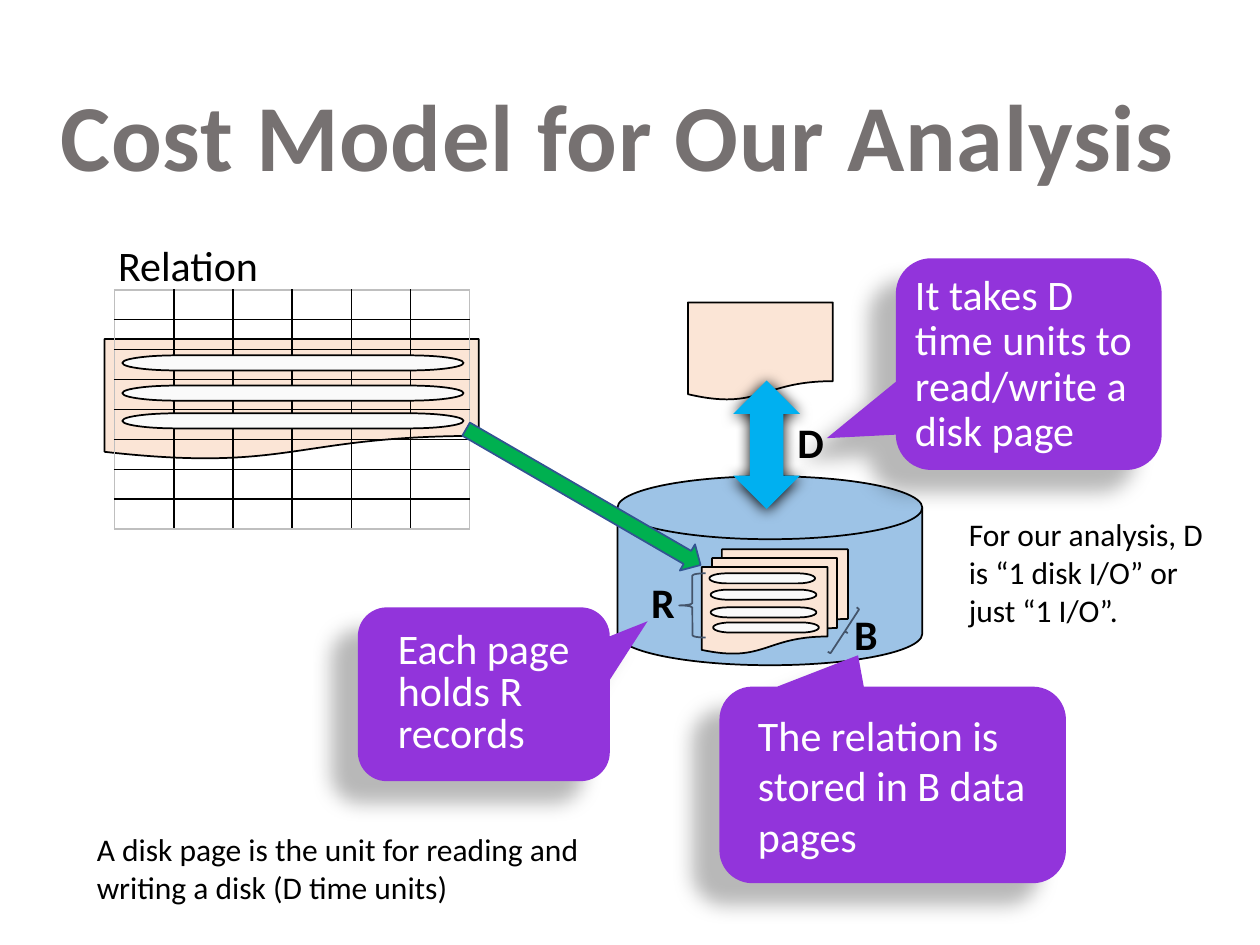
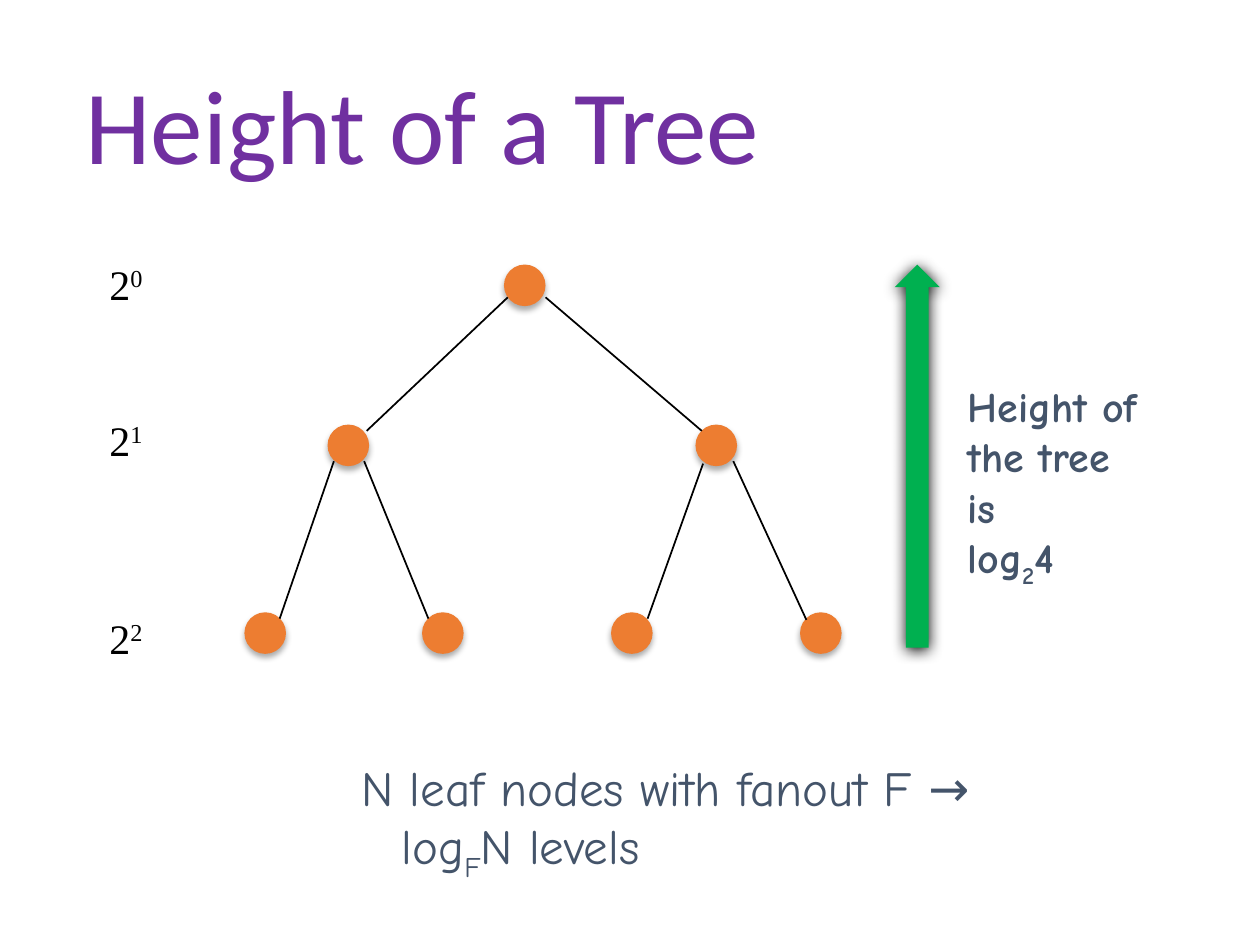
import pptx
import pptx.dml.color
import pptx.enum.shapes
import pptx.enum.text
import pptx.oxml
import pptx.oxml.ns
import pptx.util
from lxml import etree

Inches = pptx.util.Inches
Pt = pptx.util.Pt
SHAPE = pptx.enum.shapes.MSO_SHAPE
ALIGN = pptx.enum.text.PP_ALIGN
ANCHOR = pptx.enum.text.MSO_ANCHOR
qn = pptx.oxml.ns.qn

COLORS = {
    "black": "000000", "white": "FFFFFF", "grid_edge": "BFBFBF",
    "page": "FBE5D6", "record": "FAFAFA", "disk": "9DC3E6",
    "callout": "9234DB", "transfer": "00B0F0", "green": "00B050",
    "arrow_edge": "325491", "slate": "44546A", "gray_title": "767171",
    "purple_title": "7030A0", "node": "ED7D31",
}
CALLOUT_SHADOW = (28, 11.8, 19.7, 141)
ARROW_SHADOW = (100, 8.5, 1, 90)
NODE_SHADOW = (32, 3.5, 2.2, 90)


class Deck:
    def __init__(self):
        self.show = pptx.Presentation()
        self.show.slide_width, self.show.slide_height = Inches(10), Inches(7.5)
        self.slide = None

    def new_slide(self):
        self.slide = self.show.slides.add_slide(self.show.slide_layouts[6])

    def color(self, name):
        return pptx.dml.color.RGBColor.from_string(COLORS[name])

    def shape(self, kind, at, fill=None, line=None, rotation=0, shadow=None):
        shape = self.slide.shapes.add_shape(kind, *map(Inches, at))
        shape.rotation = rotation
        if fill:
            shape.fill.solid()
            shape.fill.fore_color.rgb = self.color(fill)
        else:
            shape.fill.background()
        if line:
            shape.line.color.rgb = self.color(line)
            shape.line.width = Pt(1)
        else:
            shape.line.fill.background()
        shape.shadow.inherit = False
        if shadow:
            self.cast_shadow(shape, *shadow)
        return shape

    def cast_shadow(self, shape, opacity, blur, distance, angle):
        effects = shape._element.spPr.find(qn("a:effectLst"))
        outer = etree.SubElement(
            effects, qn("a:outerShdw"), blurRad=str(int(Pt(blur))),
            dist=str(int(Pt(distance))), dir=str(angle * 60000),
            algn="ctr", rotWithShape="0")
        tint = etree.SubElement(outer, qn("a:srgbClr"), val=COLORS["black"])
        etree.SubElement(tint, qn("a:alpha"), val=str(opacity * 1000))

    def line(self, start, end):
        line = self.slide.shapes.add_connector(
            pptx.enum.shapes.MSO_CONNECTOR.STRAIGHT,
            *map(Inches, (*start, *end)))
        line.line.color.rgb = self.color("black")
        line.line.width = Pt(1)
        etree.SubElement(line._element.spPr, qn("a:effectLst"))

    def style(self, run, size, color, font="Calibri", bold=False):
        run.font.size = Pt(size)
        run.font.name = font
        run.font.bold = bold
        run.font.color.rgb = self.color(color)

    def text(self, at, paragraphs, size, color="black", font="Calibri",
             bold=False, wrap=True):
        box = self.slide.shapes.add_textbox(*map(Inches, at))
        frame = box.text_frame
        frame.word_wrap = wrap
        frame.auto_size = pptx.enum.text.MSO_AUTO_SIZE.NONE
        if isinstance(paragraphs, str):
            paragraphs = [[(paragraphs, 0)]]
        for index, pieces in enumerate(paragraphs):
            paragraph = frame.add_paragraph() if index else frame.paragraphs[0]
            for words, baseline in pieces:
                run = paragraph.add_run()
                run.text = words
                self.style(run, size, color, font, bold)
                if baseline:
                    run.font._element.set("baseline", str(baseline * 1000))
        return frame

    def callout(self, at, words, pointer, insets, spacing=None):
        bubble = self.shape(SHAPE.ROUNDED_RECTANGULAR_CALLOUT, at, "callout",
                            shadow=CALLOUT_SHADOW)
        for index, value in enumerate((*pointer, 0.167)):
            bubble.adjustments[index] = value
        frame = bubble.text_frame
        frame.word_wrap = True
        frame.vertical_anchor = ANCHOR.MIDDLE
        frame.margin_left, frame.margin_right = map(Inches, insets)
        frame.text = words
        paragraph = frame.paragraphs[0]
        paragraph.alignment = ALIGN.LEFT
        if spacing:
            paragraph.line_spacing = Pt(spacing)
        self.style(paragraph.runs[0], 24, "white")

    def grid(self, at, rows, columns):
        table = self.slide.shapes.add_table(
            rows, columns, *map(Inches, at)).table
        table.first_row = table.horz_banding = False
        for column in table.columns:
            column.width = Inches(at[2] / columns)
        for r, row in enumerate(table.rows):
            row.height = Inches(at[3] / rows)
            for c, cell in enumerate(row.cells):
                cell.margin_top = cell.margin_bottom = 0
                end = etree.SubElement(cell.text_frame.paragraphs[0]._p,
                                       qn("a:endParaRPr"))
                end.set("sz", "800")
                edges = {"lnL": c == 0, "lnR": c == columns - 1,
                         "lnT": r == 0, "lnB": r == rows - 1}
                properties = cell._tc.get_or_add_tcPr()
                for side, outer in edges.items():
                    border = etree.SubElement(properties, qn("a:" + side),
                                              w=str(int(Pt(1))))
                    fill = etree.SubElement(border, qn("a:solidFill"))
                    tint = "grid_edge" if outer else "black"
                    etree.SubElement(fill, qn("a:srgbClr"), val=COLORS[tint])
                cell.fill.background()


def cost_model(deck):
    deck.new_slide()
    deck.shape(SHAPE.FLOWCHART_DOCUMENT, (0.83, 2.69, 2.97, 0.96),
               "page", "black")
    deck.grid((0.91, 2.3, 2.82, 1.9), 8, 6)
    for top in (2.82, 3.06, 3.28):
        deck.shape(SHAPE.FLOWCHART_TERMINATOR, (0.97, top, 2.71, 0.12),
                   "record", "black")

    deck.shape(SHAPE.FLOWCHART_MAGNETIC_DISK, (4.9, 3.78, 2.42, 1.5),
               "disk", "black")
    deck.shape(SHAPE.FLOWCHART_MULTIDOCUMENT, (5.57, 4.36, 1.16, 0.83),
               "page", "black")
    for left, top in ((5.63, 4.55), (5.64, 4.68), (5.64, 4.82), (5.66, 4.94)):
        deck.shape(SHAPE.FLOWCHART_TERMINATOR, (left, top, 0.84, 0.08),
                   "record", "black")
    deck.shape(SHAPE.LEFT_BRACE, (6.68, 4.8, 0.05, 0.42), line="slate",
               rotation=213.1)
    deck.shape(SHAPE.LEFT_BRACE, (5.39, 4.55, 0.21, 0.51), line="slate")

    deck.callout((2.84, 4.82, 2, 1.38), "Each page holds R records",
                 (0.65, -0.42), (0.25, 0), 24)
    deck.callout((5.71, 5.45, 2.75, 1.56),
                 "The relation is stored in B data pages",
                 (-0.1, -0.66), (0.23, 0))
    deck.callout((7.11, 2.05, 2.11, 1.68),
                 "It takes D time units to read/write a disk page",
                 (-0.76, 0.35), (0.07, 0.07), 26)

    deck.shape(SHAPE.FLOWCHART_DOCUMENT, (5.46, 2.4, 1.15, 0.78),
               "page", "black")
    deck.shape(SHAPE.UP_DOWN_ARROW, (5.82, 3.02, 0.53, 1.02), "transfer",
               shadow=ARROW_SHADOW)
    deck.shape(SHAPE.DOWN_ARROW, (4.51, 2.87, 0.24, 2.15), "green",
               "arrow_edge", rotation=300.1)
    for letter, left, top in (("B", 6.68, 4.78), ("R", 5.07, 4.53),
                              ("D", 6.23, 3.26)):
        deck.text((left, top, 0.4, 0.51), letter, 24, bold=True, wrap=False)

    deck.text((0.84, 1.85, 1.33, 0.5), "Relation", 24, wrap=False)
    title = deck.text((0.33, 0.56, 9.15, 1.01), "Cost Model for Our Analysis",
                      54, "gray_title", bold=True, wrap=False).paragraphs[0]
    title.alignment = ALIGN.CENTER
    title.runs[0].font._element.set("spc", "50")
    deck.text((0.67, 6.54, 4.1, 0.7),
              "A disk page is the unit for reading and writing a disk "
              "(D time units)", 18)
    deck.text((7.59, 4.04, 2.08, 1.01),
              "For our analysis, D is “1 disk I/O” or just “1 I/O”.", 18)


def tree_height(deck):
    deck.new_slide()
    title = deck.text((0.58, 0.31, 8.74, 1.45), "Height of a Tree", 60,
                      "purple_title")
    title.vertical_anchor = ANCHOR.MIDDLE
    title.paragraphs[0].line_spacing = 0.9

    levels = (
        (2.1, 2, (4,)),
        (3.37, 3.24, (2.6, 5.52)),
        (4.86, 4.81, (1.94, 3.35, 4.85, 6.35)),
    )
    branches = (
        ((4.03, 2.36), (2.91, 3.42)), ((4.33, 2.36), (5.57, 3.42)),
        ((2.65, 3.66), (2.22, 4.91)), ((2.89, 3.66), (3.4, 4.91)),
        ((5.58, 3.68), (5.14, 4.91)), ((5.82, 3.66), (6.4, 4.92)),
    )
    for depth, (node_top, label_top, lefts) in enumerate(levels):
        for left in lefts:
            deck.shape(SHAPE.OVAL, (left, node_top, 0.33, 0.33), "node",
                       shadow=NODE_SHADOW)
        deck.text((0.77, label_top, 0.48, 0.51), [[("2", 0), (str(depth), 30)]],
                  24, font="Times New Roman", wrap=False)
    for start, end in branches:
        deck.line(start, end)

    deck.text((7.58, 2.97, 1.65, 1.72),
              [[("Height of the tree is", 0)],
               [("log", 0), ("2", -25), ("4", 0)]],
              24, "slate", "Comic Neue", bold=True)
    deck.shape(SHAPE.UP_ARROW, (7.1, 2.1, 0.36, 3.04), "green",
               shadow=ARROW_SHADOW)
    levels_rule = deck.text(
        (2.77, 5.96, 5.92, 1.04),
        [[("N leaf nodes with fanout F → log", 0), ("F", -25),
          ("N levels", 0)]], 28, "slate", "Comic Neue").paragraphs[0]
    indent = levels_rule._p.get_or_add_pPr()
    indent.set("marL", str(int(Inches(0.32))))
    indent.set("indent", str(int(Inches(-0.32))))


def main():
    deck = Deck()
    cost_model(deck)
    tree_height(deck)
    deck.show.save("out.pptx")


if __name__ == "__main__":
    main()
